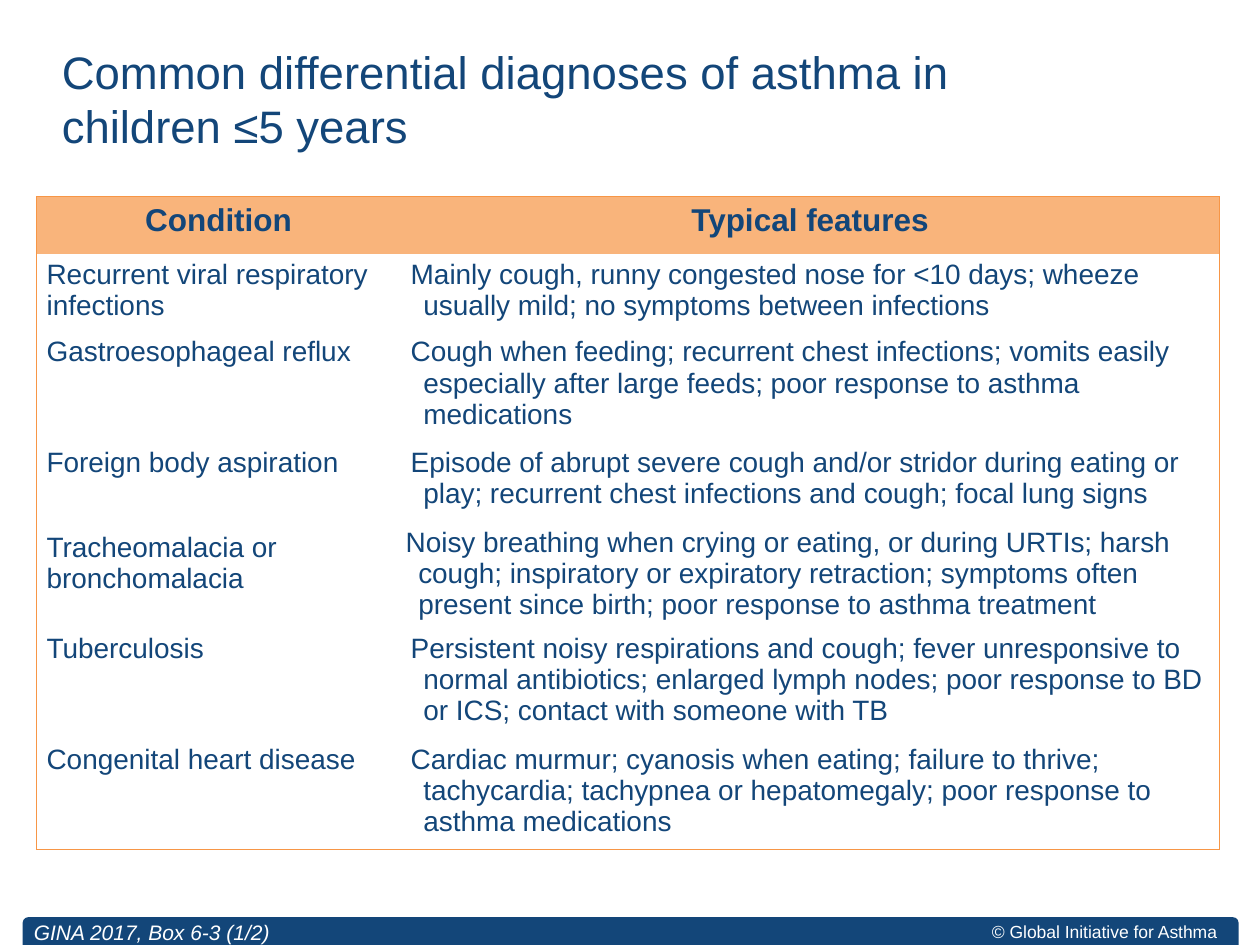
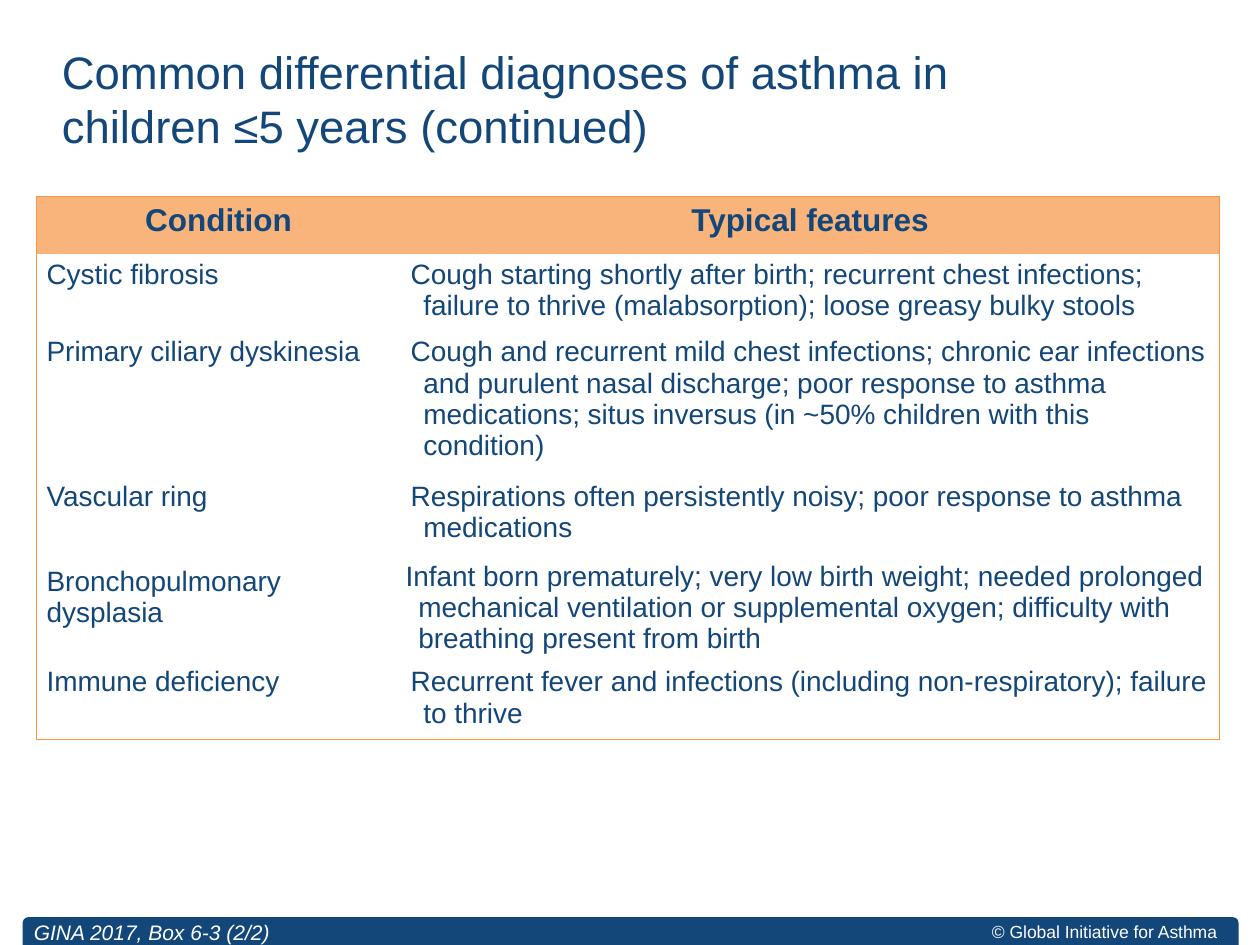
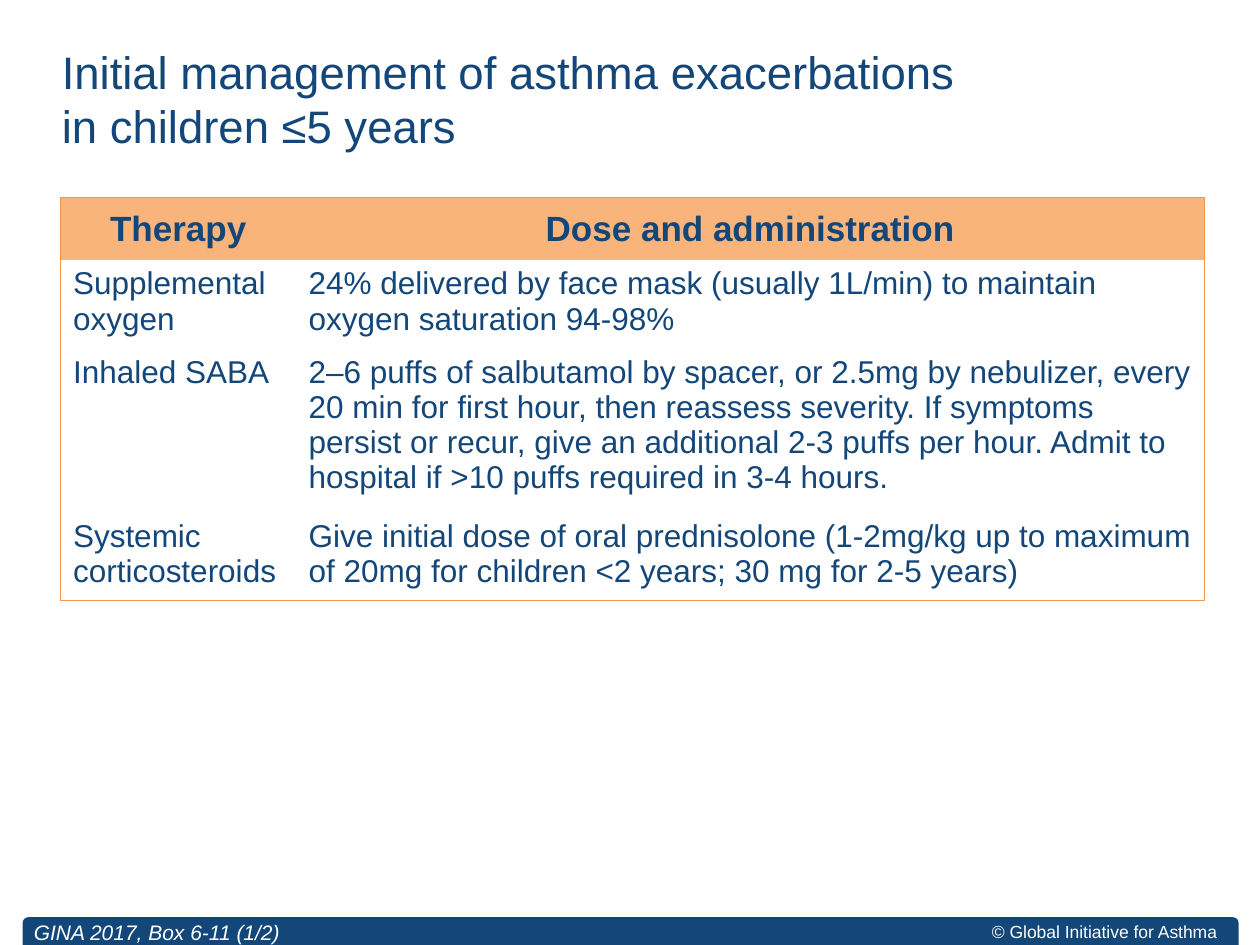
from dataclasses import dataclass

from pptx import Presentation
from pptx.dml.color import RGBColor
from pptx.enum.shapes import MSO_SHAPE
from pptx.enum.text import MSO_ANCHOR, PP_ALIGN
from pptx.oxml import parse_xml
from pptx.oxml.ns import nsdecls
from pptx.util import Inches, Pt

NAVY = RGBColor(0x13, 0x46, 0x79)
PEACH = RGBColor(0xF9, 0xB4, 0x7B)
ORANGE = RGBColor(0xF7, 0x96, 0x46)
WHITE = RGBColor(0xFF, 0xFF, 0xFF)
FONT = "Arial"

BAND_SHAPE = MSO_SHAPE.ROUND_2_SAME_RECTANGLE
TOP, MIDDLE = MSO_ANCHOR.TOP, MSO_ANCHOR.MIDDLE
LEFT, CENTER = PP_ALIGN.LEFT, PP_ALIGN.CENTER
NO_STYLE_NO_GRID = "{2D5ABB26-0587-4C30-8999-92F81FD0307C}"


@dataclass
class TableLook:
    """Lengths in inches, text sizes in points, insets as left, top, right, bottom."""
    left: float
    top: float
    widths: tuple
    heading_height: float
    heading_size: int
    heading_insets: tuple
    heading_anchor: MSO_ANCHOR
    body_size: int
    body_insets: tuple
    hanging: float = 0


DIAGNOSIS_LOOK = TableLook(0.29, 1.56, (2.89, 6.5), 0.46, 18, (0.1, 0.05, 0.1, 0.05), TOP,
                           16, (0.08, 0.04, 0.08, 0.04), hanging=0.1)
THERAPY_LOOK = TableLook(0.48, 1.57, (1.87, 7.21), 0.47, 20, (0.1, 0.08, 0.1, 0.08), MIDDLE,
                         18, (0.1, 0.05, 0.1, 0.05))
# Insets of the condition and features cells in the row that sits a little lower.
LOWERED = ((0.08, 0.1, 0.08, 0.04), (0.04, 0.06, 0.04, 0))

DIAGNOSIS_HEADINGS = ("Condition", "Typical features")
COMMON_DIAGNOSES = [
    (0.56, "Recurrent viral respiratory infections",
     "Mainly cough, runny congested nose for <10 days; wheeze usually mild; "
     "no symptoms between infections"),
    (0.81, "Gastroesophageal reflux",
     "Cough when feeding; recurrent chest infections; vomits easily especially after "
     "large feeds; poor response to asthma medications"),
    (0.56, "Foreign body aspiration",
     "Episode of abrupt severe cough and/or stridor during eating or play; recurrent "
     "chest infections and cough; focal lung signs"),
    (0.79, "Tracheomalacia or bronchomalacia",
     "Noisy breathing when crying or eating, or during URTIs; harsh cough; inspiratory or "
     "expiratory retraction; symptoms often present since birth; poor response to asthma "
     "treatment"),
    (0.81, "Tuberculosis",
     "Persistent noisy respirations and cough; fever unresponsive to normal antibiotics; "
     "enlarged lymph nodes; poor response to BD or ICS; contact with someone with TB"),
    (0.81, "Congenital heart disease",
     "Cardiac murmur; cyanosis when eating; failure to thrive; tachycardia; tachypnea or "
     "hepatomegaly; poor response to asthma medications"),
]
MORE_DIAGNOSES = [
    (0.56, "Cystic fibrosis",
     "Cough starting shortly after birth; recurrent chest infections; failure to thrive "
     "(malabsorption); loose greasy bulky stools"),
    (1.05, "Primary ciliary dyskinesia",
     "Cough and recurrent mild chest infections; chronic ear infections and purulent nasal "
     "discharge; poor response to asthma medications; situs inversus (in ~50% children "
     "with this condition)"),
    (0.56, "Vascular ring",
     "Respirations often persistently noisy; poor response to asthma medications"),
    (0.79, "Bronchopulmonary dysplasia",
     "Infant born prematurely; very low birth weight; needed prolonged mechanical "
     "ventilation or supplemental oxygen; difficulty with breathing present from birth"),
    (0.56, "Immune deficiency",
     "Recurrent fever and infections (including non-respiratory); failure to thrive"),
]
THERAPY_HEADINGS = ("Therapy", "Dose and administration")
THERAPIES = [
    (0.65, "Supplemental oxygen",
     "24% delivered by face mask (usually 1L/min) to maintain oxygen saturation 94-98%"),
    (1.2, "Inhaled SABA",
     "2–6 puffs of salbutamol by spacer, or 2.5mg by nebulizer, every 20 min for first "
     "hour, then reassess severity. If symptoms persist or recur, give an additional 2-3 "
     "puffs per hour. Admit to hospital if >10 puffs required in 3-4 hours."),
    (0.65, "Systemic corticosteroids",
     "Give initial dose of oral prednisolone (1-2mg/kg up to maximum of 20mg for children "
     "<2 years; 30 mg for 2-5 years)"),
]


class SlideBuilder:
    def __init__(self):
        self.deck = Presentation()
        self.deck.slide_width = Inches(10)
        self.deck.slide_height = Inches(7.5)
        self.page = None

    def start(self, title_lines, reference):
        """Add a slide with its band, footers and title."""
        self.page = self.deck.slides.add_slide(self.deck.slide_layouts[6])
        self.band()
        self.text((7.82, 7.27, 1.89, 0.24), ["© Global Initiative for Asthma"], 10, WHITE,
                  align=CENTER, wrap=False)
        self.text((0.19, 0.27, 8.31, 1.02), title_lines, 26, NAVY,
                  insets=(0.3, 0.05, 0.1, 0.05))
        self.text((0.17, 7.3, 2.5, 0.2), [reference], 12, WHITE,
                  insets=(0.1, 0, 0.1, 0), italic=True)

    def band(self):
        band = self.page.shapes.add_shape(BAND_SHAPE, Inches(0.18), Inches(7.28),
                                          Inches(9.65), Inches(0.24))
        band.adjustments[0] = 0.18
        band.shadow.inherit = False
        band.fill.solid()
        band.fill.fore_color.rgb = NAVY
        band.line.fill.background()

    def text(self, place, lines, size, colour, insets=(0, 0, 0, 0), align=LEFT,
             wrap=True, italic=False):
        box = self.page.shapes.add_textbox(*map(Inches, place))
        frame = box.text_frame
        frame.word_wrap = wrap
        frame.vertical_anchor = MIDDLE
        self.set_insets(frame, insets)
        para = frame.paragraphs[0]
        para.alignment = align
        for number, line in enumerate(lines):
            if number:
                para.add_line_break()
            self.span(para, line, size, colour, italic=italic)

    def span(self, para, words, size, colour, bold=False, italic=False):
        span = para.add_run()
        span.text = words
        font = span.font
        font.name, font.size, font.bold, font.italic = FONT, Pt(size), bold, italic
        font.color.rgb = colour

    def set_insets(self, target, insets):
        (target.margin_left, target.margin_top,
         target.margin_right, target.margin_bottom) = map(Inches, insets)

    def table(self, look, headings, rows, lowered_row=None):
        """Draw headings and (height, first, second) rows inside one thin outline."""
        heights = [look.heading_height] + [row[0] for row in rows]
        texts = [headings] + [row[1:] for row in rows]
        frame = self.page.shapes.add_table(
            len(texts), len(headings), Inches(look.left), Inches(look.top),
            Inches(sum(look.widths)), Inches(sum(heights)))
        table = frame.table
        table.first_row = table.horz_banding = False
        table._tbl.tblPr[0].text = NO_STYLE_NO_GRID
        for column, width in zip(table.columns, look.widths):
            column.width = Inches(width)
        for r, (height, words) in enumerate(zip(heights, texts)):
            table.rows[r].height = Inches(height)
            for c, word in enumerate(words):
                cell = table.cell(r, c)
                if r == 0:
                    self.heading_cell(cell, look, word)
                else:
                    insets = LOWERED[c] if r == lowered_row else look.body_insets
                    self.body_cell(cell, look, word, insets, look.hanging * c)
                edges = {"L": c == 0, "R": c == len(words) - 1,
                         "T": r == 0, "B": r == len(texts) - 1}
                self.outline(cell, [side for side, outer in edges.items() if outer])

    def heading_cell(self, cell, look, word):
        self.fill_cell(cell, PEACH, look.heading_insets, look.heading_anchor)
        para = cell.text_frame.paragraphs[0]
        para.alignment = CENTER
        self.span(para, word, look.heading_size, NAVY, bold=True)

    def body_cell(self, cell, look, word, insets, hanging):
        self.fill_cell(cell, WHITE, insets, TOP)
        para = cell.text_frame.paragraphs[0]
        if hanging:
            properties = para._p.get_or_add_pPr()
            properties.set("marL", str(Inches(hanging)))
            properties.set("indent", str(-Inches(hanging)))
        self.span(para, word, look.body_size, NAVY)

    def fill_cell(self, cell, colour, insets, anchor):
        cell.fill.solid()
        cell.fill.fore_color.rgb = colour
        cell.vertical_anchor = anchor
        self.set_insets(cell, insets)

    def outline(self, cell, sides):
        """Border the given sides; the line elements must precede the fill."""
        properties = cell._tc.get_or_add_tcPr()
        for position, side in enumerate(sides):
            properties.insert(position, parse_xml(
                f'<a:ln{side} {nsdecls("a")} w="{Pt(0.5)}"><a:solidFill>'
                f'<a:srgbClr val="{ORANGE}"/></a:solidFill></a:ln{side}>'))


def main():
    builder = SlideBuilder()
    builder.start(["Common differential diagnoses of asthma in children ≤5 years"],
                  "GINA 2017, Box 6-3 (1/2)")
    builder.table(DIAGNOSIS_LOOK, DIAGNOSIS_HEADINGS, COMMON_DIAGNOSES, lowered_row=4)

    builder.start(["Common differential diagnoses of asthma in children ≤5 years (continued)"],
                  "GINA 2017, Box 6-3 (2/2)")
    builder.table(DIAGNOSIS_LOOK, DIAGNOSIS_HEADINGS, MORE_DIAGNOSES, lowered_row=4)

    builder.start(["Initial management of asthma exacerbations", "in children ≤5 years"],
                  "GINA 2017, Box 6-11 (1/2)")
    builder.table(THERAPY_LOOK, THERAPY_HEADINGS, THERAPIES)
    builder.deck.save("out.pptx")


if __name__ == "__main__":
    main()
